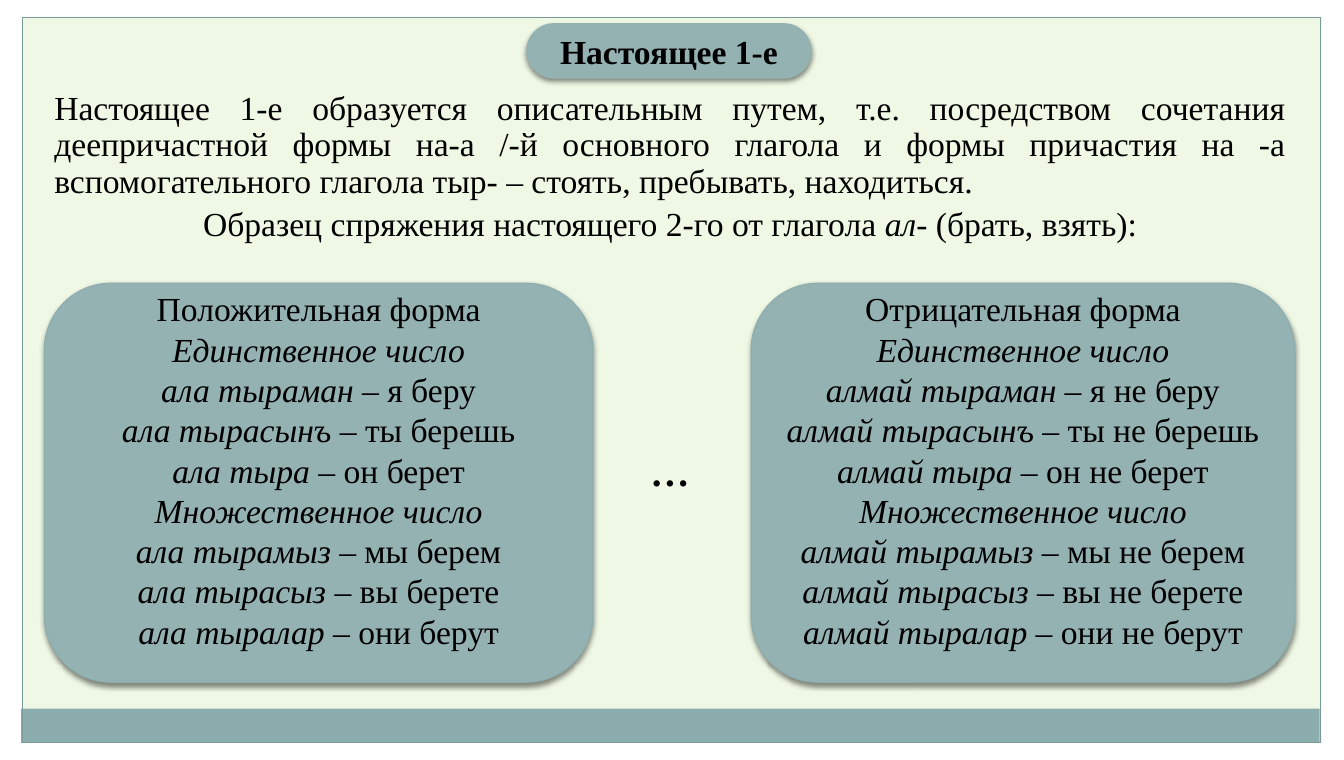
from lxml import etree
from pptx import Presentation
from pptx.dml.color import RGBColor
from pptx.enum.shapes import MSO_SHAPE
from pptx.enum.text import MSO_ANCHOR, PP_ALIGN
from pptx.oxml import parse_xml
from pptx.oxml.ns import nsdecls
from pptx.util import Inches, Pt

WIDTH, HEIGHT, MARGIN = 13.33, 7.54, 0.17
SIDE_MARGIN = 0.22
FONT = "Times New Roman"
BLACK = RGBColor(0x00, 0x00, 0x00)
WHITE = RGBColor(0xFF, 0xFF, 0xFF)
PALE_GREEN = RGBColor(0xEF, 0xF8, 0xE5)
PANEL = RGBColor(0x95, 0xB2, 0xB3)
BAND = RGBColor(0x8C, 0xAD, 0xAE)
FRAME = RGBColor(0x7C, 0x99, 0x9A)

RULE = (
    "Настоящее 1-е образуется описательным путем, т.е. посредством сочетания "
    "деепричастной формы на-а /-й основного глагола и формы причастия на -а "
    "вспомогательного глагола тыр- – стоять, пребывать, находиться."
)
SINGULAR = [("тыраман", "я", "беру"), ("тырасынъ", "ты", "берешь"), ("тыра", "он", "берет")]
PLURAL = [("тырамыз", "мы", "берем"), ("тырасыз", "вы", "берете"), ("тыралар", "они", "берут")]


def add_block(slide, kind, box, fill=None, line=None, shadow=False):
    shape = slide.shapes.add_shape(kind, *[Inches(value) for value in box])
    shape.shadow.inherit = False
    if fill is None:
        shape.fill.background()
    else:
        shape.fill.solid()
        shape.fill.fore_color.rgb = fill
    if line is None:
        shape.line.fill.background()
    else:
        shape.line.color.rgb = line
        shape.line.width = Pt(0.75)
    if shadow:
        add_shadow(shape)
    return shape


def add_shadow(shape):
    effects = shape._element.spPr.find("{*}effectLst")
    effects.append(parse_xml(
        f'<a:outerShdw {nsdecls("a")} blurRad="{Pt(4)}" dist="{Pt(2)}" dir="5400000" '
        'rotWithShape="0"><a:srgbClr val="000000"><a:alpha val="45000"/>'
        '</a:srgbClr></a:outerShdw>'
    ))


def write_paragraph(paragraph, parts, align=PP_ALIGN.CENTER, size=24, bold=False):
    paragraph.alignment = align
    for text, italic in parts:
        run = paragraph.add_run()
        run.text = text
        run.font.name = FONT
        run.font.size = Pt(size)
        run.font.bold = bold
        run.font.italic = italic
        run.font.color.rgb = BLACK


def add_text(slide, box, lines, **style):
    text_box = slide.shapes.add_textbox(*[Inches(value) for value in box])
    frame = text_box.text_frame
    frame.word_wrap = True
    for index, parts in enumerate(lines):
        paragraph = frame.add_paragraph() if index else frame.paragraphs[0]
        write_paragraph(paragraph, parts, **style)
    return text_box


def add_frame(slide):
    for box in (
        (0, HEIGHT - MARGIN, WIDTH, MARGIN),
        (0, 0, WIDTH, MARGIN),
        (WIDTH - SIDE_MARGIN, 0, SIDE_MARGIN, HEIGHT),
        (0, 0, SIDE_MARGIN, HEIGHT),
    ):
        add_block(slide, MSO_SHAPE.RECTANGLE, box, WHITE)
    add_block(slide, MSO_SHAPE.RECTANGLE, (0.21, 7.03, 12.88, 0.34), BAND)
    add_block(slide, MSO_SHAPE.RECTANGLE, (SIDE_MARGIN, MARGIN, 12.88, 7.2), line=FRAME)


def add_title(slide):
    box = (5.22, 0.23, 2.83, 0.55)
    pill = add_block(slide, MSO_SHAPE.ROUNDED_RECTANGLE, box, PANEL, shadow=True)
    pill.adjustments[0] = 0.5
    title = slide.shapes.title
    title.left, title.top, title.width, title.height = [Inches(value) for value in box]
    title.text_frame.vertical_anchor = MSO_ANCHOR.MIDDLE
    write_paragraph(title.text_frame.paragraphs[0], [("Настоящее 1-е", False)], bold=True)
    pill._element.addnext(title._element)


def add_conjugation(slide, left, width, heading, stem, negation=""):
    add_block(slide, MSO_SHAPE.FLOWCHART_ALTERNATE_PROCESS,
              (left, 2.81, width, 3.96), PANEL, BAND, shadow=True)
    lines = [[(heading, False)]]
    for number, forms in (("Единственное число", SINGULAR), ("Множественное число", PLURAL)):
        lines.append([(number, True)])
        for auxiliary, pronoun, verb in forms:
            lines.append([(f"{stem} {auxiliary}", True),
                          (f" – {pronoun} {negation}{verb}", False)])
    add_text(slide, (left, 2.81, width, 3.74), lines)


def main():
    presentation = Presentation()
    presentation.slide_width = Inches(WIDTH)
    presentation.slide_height = Inches(HEIGHT)
    slide = presentation.slides.add_slide(presentation.slide_layouts[5])
    slide.background.fill.solid()
    slide.background.fill.fore_color.rgb = PALE_GREEN

    add_frame(slide)
    rule = add_text(slide, (0.44, 0.86, 12.41, 1.26), [[(RULE, False)]],
                    align=PP_ALIGN.JUSTIFY)
    rule.text_frame.paragraphs[0].line_spacing = 0.9
    add_title(slide)
    add_conjugation(slide, 0.44, 5.44, "Положительная форма", "ала")
    add_conjugation(slide, 7.45, 5.39, "Отрицательная форма", "алмай", "не ")
    add_text(slide, (6.3, 4.39, 0.69, 0.57), [[("…", False)]], size=28, bold=True)
    add_text(slide, (0.44, 1.96, 12.41, 0.5), [[
        ("Образец спряжения настоящего 2-го от глагола ", False),
        ("ал-", True),
        (" (брать, взять):", False),
    ]])
    presentation.save("out.pptx")


if __name__ == "__main__":
    main()
